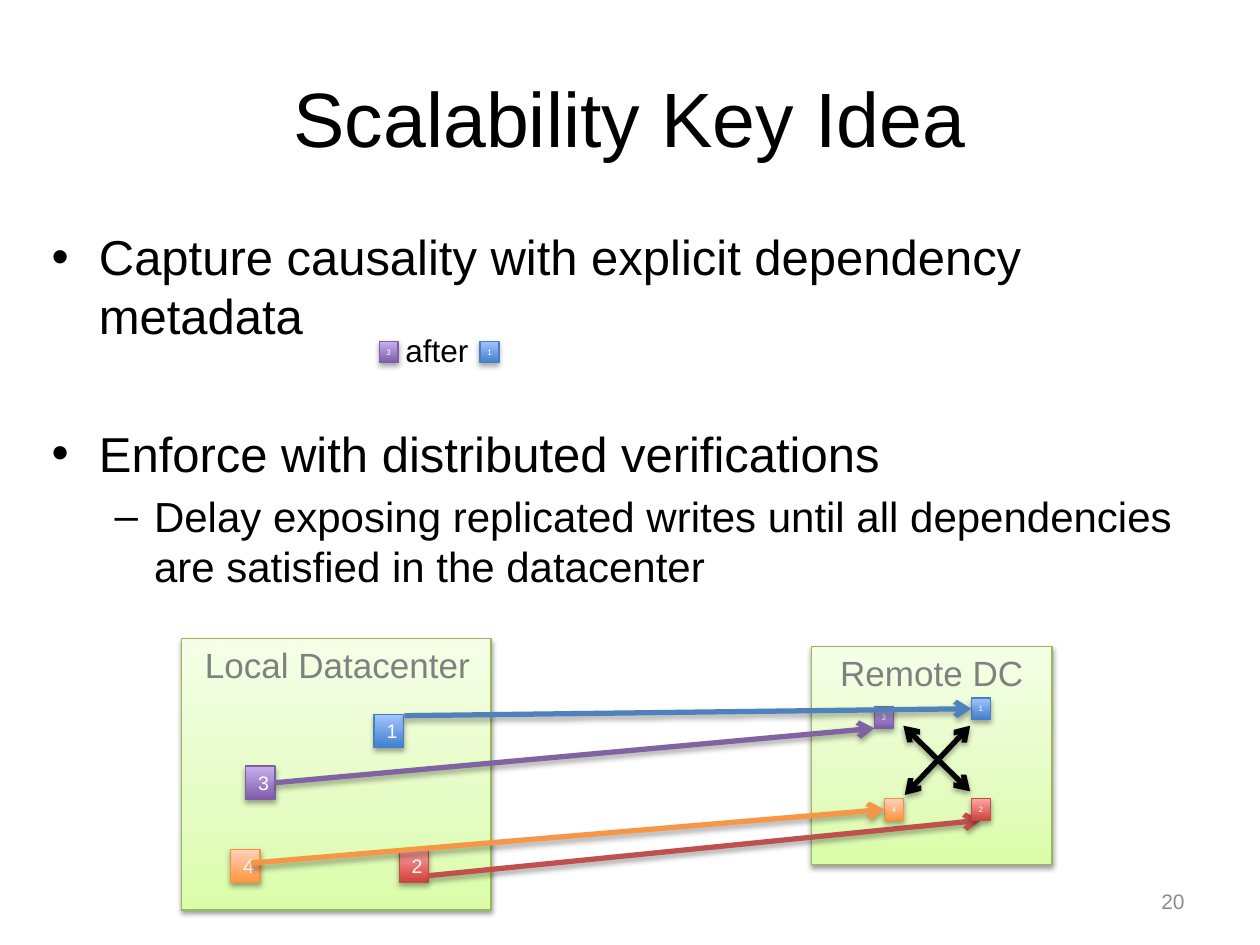
from pptx import Presentation
from pptx.dml.color import RGBColor
from pptx.enum import shapes, text
from pptx.oxml import ns, parse_xml
from pptx.util import Pt

FONT = "Arial"
COLORS = {
    "black": "000000", "white": "FFFFFF", "label": "808080", "number": "8C8C8C",
    "green dark": "DAFDA7", "green middle": "E4FCC2", "green light": "F5FFE7",
    "green line": "98B955",
    "blue dark": "3F80CE", "blue light": "A4C4FF", "blue line": "4B7EBC", "blue arrow": "4F81BD",
    "purple dark": "7F5BAB", "purple light": "C8B0ED", "purple line": "7D60A0",
    "purple arrow": "8064A2",
    "red dark": "D1403C", "red light": "FFA6A5", "red line": "BF4C48", "red arrow": "C0504D",
    "orange dark": "FF953E", "orange light": "FFD2BD", "orange line": "F69240",
    "orange arrow": "F79646",
}
RGB = {name: RGBColor.from_string(value) for name, value in COLORS.items()}


def add_span(para, words, size, color):
    span = para.add_run()
    span.text = words
    span.font.name = FONT
    span.font.size = Pt(size)
    span.font.color.rgb = RGB[color]


def add_shadow(item, distance, opacity):
    """Give a shape or connector a soft shadow straight below it."""
    properties = item.element.spPr
    for old in properties.findall(ns.qn("a:effectLst")):
        properties.remove(old)
    properties.append(parse_xml(
        f'<a:effectLst {ns.nsdecls("a")}><a:outerShdw blurRad="{Pt(3.1)}" '
        f'dist="{Pt(distance)}" dir="5400000" rotWithShape="0">'
        f'<a:srgbClr val="{COLORS["black"]}"><a:alpha val="{opacity * 1000}"/></a:srgbClr>'
        '</a:outerShdw></a:effectLst>'))


deck = Presentation()
deck.slide_width, deck.slide_height = Pt(720), Pt(540)
page = deck.slides.add_slide(deck.slide_layouts[1])

# Title and bullet list
title, body = page.placeholders
title.left, title.top, title.width, title.height = Pt(36), Pt(21.6), Pt(648), Pt(90)
add_span(title.text_frame.paragraphs[0], "Scalability Key Idea", 44, "black")

body.left, body.top, body.width, body.height = Pt(22.3), Pt(126), Pt(676), Pt(356.4)
bullets = [
    ("Capture causality with explicit dependency metadata", 0, 28, None),
    ("Enforce with distributed verifications", 0, 28, 45),
    ("Delay exposing replicated writes until all dependencies "
     "are satisfied in the datacenter", 1, 24, None),
]
for index, (words, level, size, gap) in enumerate(bullets):
    frame = body.text_frame
    para = frame.add_paragraph() if index else frame.paragraphs[0]
    para.level = level
    if gap:
        para.space_before = Pt(gap)
    add_span(para, words, size, "black")

# Datacenters and numbered tiles: key, colour, left, top, width, height, text size
tile_colors = {"1": "blue", "2": "red", "3": "purple", "4": "orange"}
large, small = (16.8, 19, 11.2), (10.8, 12.2, 4.5)
boxes = [
    ("local", "green", 103.7, 365, 177, 155, 0),
    ("remote", "green", 463.7, 369.4, 137.5, 124.6, 0),
]
tile_places = [
    ("local", large, {"1": (213.8, 408.2), "3": (140.4, 437.8),
                      "2": (228.2, 485.3), "4": (131.8, 485.3)}),
    ("remote", small, {"1": (555.1, 398.9), "3": (499.7, 403.9),
                       "2": (555.1, 456.5), "4": (505.4, 456.5)}),
    ("example", small, {"1": (274.3, 195.1), "3": (216.7, 195.1)}),
]
for place, measures, corners in tile_places:
    for number, corner in corners.items():
        boxes.append((f"{place} {number}", tile_colors[number], *corner, *measures))

drawn = {}
for key, color, left, top, width, height, size in boxes:
    box = page.shapes.add_shape(shapes.MSO_SHAPE.RECTANGLE,
                                Pt(left), Pt(top), Pt(width), Pt(height))
    drawn[key] = box
    box.fill.gradient()
    box.fill.gradient_angle = 90
    first, last = box.fill.gradient_stops
    first.position, last.position = 0, 1
    first.color.rgb, last.color.rgb = RGB[f"{color} dark"], RGB[f"{color} light"]
    box.line.color.rgb = RGB[f"{color} line"]
    box.line.width = Pt(0.75)
    if size:
        frame = box.text_frame
        frame.vertical_anchor = text.MSO_ANCHOR.MIDDLE
        if size == small[2]:
            frame.margin_left = frame.margin_right = 0
            frame.margin_top = frame.margin_bottom = 0
        para = frame.paragraphs[0]
        para.alignment = text.PP_ALIGN.CENTER
        add_span(para, key[-1], size, "white")
        add_shadow(box, 1.8, 35)
    else:
        stops = box.element.spPr.find(".//" + ns.qn("a:gsLst"))
        stops.insert(1, parse_xml(f'<a:gs {ns.nsdecls("a")} pos="35000">'
                                  f'<a:srgbClr val="{COLORS["green middle"]}"/></a:gs>'))
        add_shadow(box, 1.6, 38)

# Labels: words, left, top, width, height, size, colour, alignment, anchor, wrap
center, top_anchor = text.PP_ALIGN.CENTER, text.MSO_ANCHOR.TOP
labels = [
    ("Local Datacenter", 102.2, 364.3, 181.4, 38.9, 20, "label", center, top_anchor, True),
    ("Remote DC", 463.7, 368.6, 137.5, 30.2, 20, "label", center, top_anchor, True),
    ("after", 224.6, 185.8, 54, 28.8, 18, "black", text.PP_ALIGN.LEFT, top_anchor, False),
    ("20", 516, 500.4, 168, 28.8, 12, "number",
     text.PP_ALIGN.RIGHT, text.MSO_ANCHOR.MIDDLE, True),
]
for words, left, top, width, height, size, color, align, anchor, wrap in labels:
    label = page.shapes.add_textbox(Pt(left), Pt(top), Pt(width), Pt(height))
    label.text_frame.word_wrap = wrap
    label.text_frame.vertical_anchor = anchor
    para = label.text_frame.paragraphs[0]
    para.alignment = align
    add_span(para, words, size, color)

# Arrows: colour, start, end, joined start and end (tile, side), heads
one_way, both_ways = ("tailEnd",), ("headEnd", "tailEnd")
arrows = [
    ("red arrow", (244.8, 500.4), (560.5, 468.7), None, ("remote 2", 2), one_way),
    ("orange arrow", (143.3, 493.2), (505.4, 462.6), None, ("remote 4", 1), one_way),
    ("purple arrow", (157.2, 447.3), (499.7, 416.2), ("local 3", 3), None, one_way),
    ("blue arrow", (231.1, 409), (555.1, 405), None, ("remote 1", 1), one_way),
    ("black", (517, 454.3), (554.4, 414.7), None, None, both_ways),
    ("black", (516.2, 414.7), (554.4, 452.2), None, None, both_ways),
]
for color, start, end, source, target, heads in arrows:
    arrow = page.shapes.add_connector(shapes.MSO_CONNECTOR.STRAIGHT,
                                      *(Pt(value) for value in start + end))
    if source:
        arrow.begin_connect(drawn[source[0]], source[1])
    if target:
        arrow.end_connect(drawn[target[0]], target[1])
    arrow.line.color.rgb = RGB[color]
    arrow.line.width = Pt(3)
    for head in heads:
        arrow.line._get_or_add_ln().append(
            parse_xml(f'<a:{head} {ns.nsdecls("a")} type="arrow"/>'))
    add_shadow(arrow, 1.8, 35)
    if color == "red arrow":  # this one runs behind the remote tiles
        drawn["remote 1"].element.addprevious(arrow.element)

deck.save("out.pptx")
